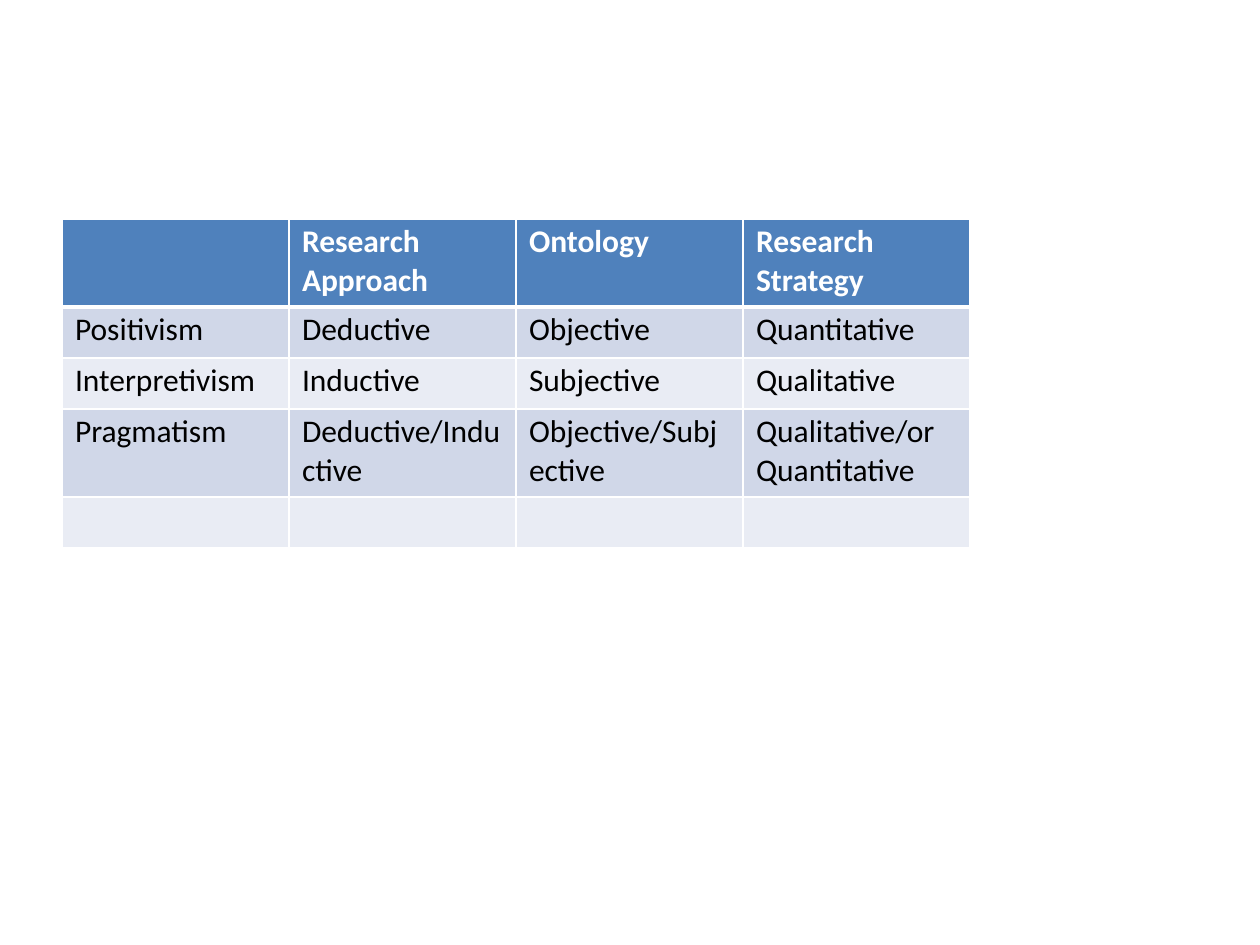
"""Build a slide with a table comparing research philosophies."""
import pptx
import pptx.dml.color
import pptx.oxml.ns
import pptx.util
from lxml import etree

PX_PER_INCH = 126
FONT = "Calibri"
COLORS = {
    "header": "4F81BC",
    "odd": "D0D7E8",
    "even": "E9ECF4",
    "border": "FFFFFF",
    "header_text": "FFFFFF",
    "body_text": "000000",
}
PHILOSOPHIES = [
    ["", "Research\nApproach", "Ontology", "Research\nStrategy"],
    ["Positivism", "Deductive", "Objective", "Quantitative"],
    ["Interpretivism", "Inductive", "Subjective", "Qualitative"],
    ["Pragmatism", "Deductive/Indu\nctive", "Objective/Subj\nective",
     "Qualitative/or\nQuantitative"],
    ["", "", "", ""],
]
COLUMN_WIDTH = 227
ROW_HEIGHTS = [88, 51, 51, 88, 51]


def px(length):
    return pptx.util.Emu(round(length * 914400 / PX_PER_INCH))


def color(name):
    return pptx.dml.color.RGBColor.from_string(COLORS[name])


def set_border(cell, side, points):
    qn = pptx.oxml.ns.qn
    properties = cell._tc.get_or_add_tcPr()
    line = etree.SubElement(properties, qn(f"a:{side}"), w=str(pptx.util.Pt(points)))
    fill = etree.SubElement(line, qn("a:solidFill"))
    etree.SubElement(fill, qn("a:srgbClr"), val=COLORS["border"])


def format_cell(cell, wording, row):
    is_header = row == 0
    cell.margin_left, cell.margin_top = px(13), px(4)
    cell.margin_right = cell.margin_bottom = 0
    border_widths = {"lnL": 1, "lnR": 1, "lnT": 3 if row == 1 else 1,
                     "lnB": 3 if is_header else 1}
    for side, points in border_widths.items():
        set_border(cell, side, points)
    cell.fill.solid()
    band = "header" if is_header else "odd" if row % 2 else "even"
    cell.fill.fore_color.rgb = color(band)
    cell.text_frame.text = wording
    for paragraph in cell.text_frame.paragraphs:
        paragraph.font.size = pptx.util.Pt(18)
        for run in paragraph.runs:
            run.font.name = FONT
            run.font.size = pptx.util.Pt(18)
            run.font.bold = is_header
            run.font.color.rgb = color("header_text" if is_header else "body_text")


def add_comparison(slide, left, top):
    columns = len(PHILOSOPHIES[0])
    comparison = slide.shapes.add_table(
        len(PHILOSOPHIES), columns, px(left), px(top),
        px(COLUMN_WIDTH * columns), px(sum(ROW_HEIGHTS))).table
    for column in comparison.columns:
        column.width = px(COLUMN_WIDTH)
    for row, (height, wordings) in enumerate(zip(ROW_HEIGHTS, PHILOSOPHIES)):
        comparison.rows[row].height = px(height)
        for column, wording in enumerate(wordings):
            format_cell(comparison.cell(row, column), wording, row)


def main():
    presentation = pptx.Presentation()
    presentation.slide_width, presentation.slide_height = px(1260), px(945)
    slide = presentation.slides.add_slide(presentation.slide_layouts[6])
    add_comparison(slide, 62, 219)
    presentation.save("out.pptx")


if __name__ == "__main__":
    main()
